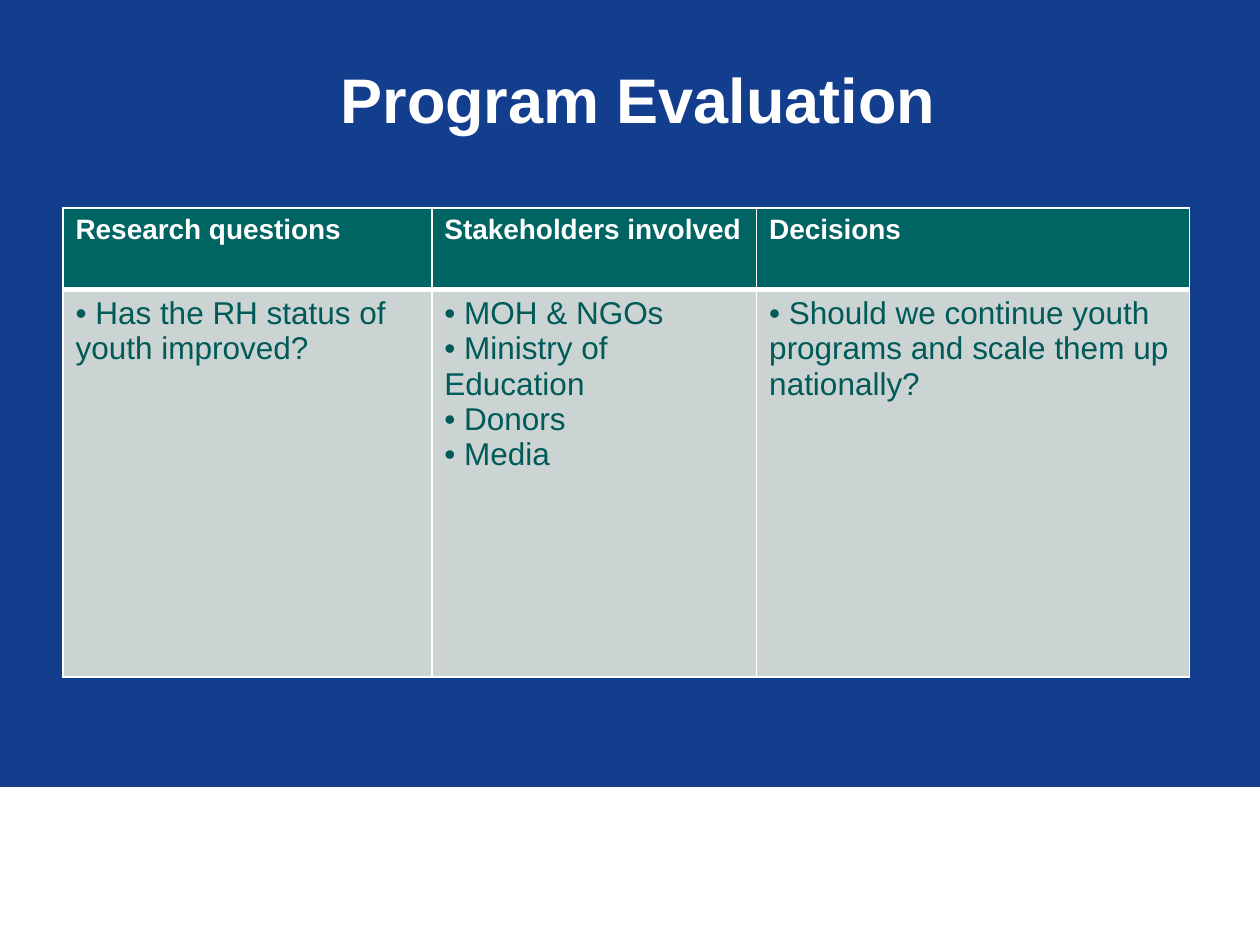
from dataclasses import dataclass

from lxml.etree import SubElement
from pptx import Presentation
from pptx.dml.color import RGBColor
from pptx.enum.shapes import MSO_SHAPE
from pptx.enum.text import MSO_ANCHOR, PP_ALIGN
from pptx.oxml.ns import qn
from pptx.util import Pt


@dataclass(frozen=True)
class Theme:
    font: str = "Arial"
    back: str = "133D8D"
    white: str = "FFFFFF"
    head: str = "006462"
    body: str = "CCD3D3"
    ink: str = "005A58"
    title_size: int = 36
    head_size: int = 16
    body_size: int = 18


@dataclass(frozen=True)
class Column:
    title: str
    width: float
    points: tuple[str, ...]


THEME = Theme()
COLUMNS = (
    Column("Research questions", 210.8, ("Has the RH status of youth improved?",)),
    Column("Stakeholders involved", 185.6,
           ("MOH & NGOs", "Ministry of Education", "Donors", "Media")),
    Column("Decisions", 247.4,
           ("Should we continue youth programs and scale them up nationally?",)),
)
ROWS = (46.8, 221.4)


def paint(fill, color: str) -> None:
    fill.solid()
    fill.fore_color.rgb = RGBColor.from_string(color)


def style(para, size: int, color: str, bold: bool) -> None:
    for run in para.runs:
        font = run.font
        font.name, font.size, font.bold = THEME.font, Pt(size), bold
        font.color.rgb = RGBColor.from_string(color)


def edge(cell, top: float, base: float) -> None:
    """Draw white cell borders, with 1 pt sides."""
    props = cell._tc.get_or_add_tcPr()
    for tag, width in (("lnL", 1), ("lnR", 1), ("lnT", top), ("lnB", base)):
        line = SubElement(props, qn(f"a:{tag}"), w=str(Pt(width)))
        fill = SubElement(line, qn("a:solidFill"))
        SubElement(fill, qn("a:srgbClr"), val=THEME.white)


def bullet(para) -> None:
    props = para._p.get_or_add_pPr()
    props.set("marL", "0")
    props.set("indent", "0")
    SubElement(props, qn("a:buFont"), typeface=THEME.font)
    SubElement(props, qn("a:buChar"), char="•")


def add_title(slide, text: str) -> None:
    box = slide.shapes.add_textbox(Pt(59), Pt(25.2), Pt(611.3), Pt(90))
    frame = box.text_frame
    frame.word_wrap = True
    frame.vertical_anchor = MSO_ANCHOR.MIDDLE
    frame.margin_bottom = Pt(32)
    frame.text = text
    para = frame.paragraphs[0]
    para.alignment = PP_ALIGN.CENTER
    style(para, THEME.title_size, THEME.white, True)


def add_band(slide) -> None:
    band = slide.shapes.add_shape(MSO_SHAPE.RECTANGLE, 0, Pt(450), Pt(720), Pt(90))
    band.shadow.inherit = False
    paint(band.fill, THEME.white)
    paint(band.line.fill, THEME.white)
    band.line.width = Pt(0.75)


def add_grid(slide, columns: tuple[Column, ...]) -> None:
    width = sum(col.width for col in columns)
    grid = slide.shapes.add_table(len(ROWS), len(columns), Pt(36), Pt(118.8),
                                  Pt(width), Pt(sum(ROWS))).table
    for row, height in zip(grid.rows, ROWS):
        row.height = Pt(height)
    for i, col in enumerate(columns):
        grid.columns[i].width = Pt(col.width)
        head, body = grid.cell(0, i), grid.cell(1, i)
        edge(head, 1, 3)
        edge(body, 3, 1)
        paint(head.fill, THEME.head)
        paint(body.fill, THEME.body)
        head.text_frame.text = col.title
        style(head.text_frame.paragraphs[0], THEME.head_size, THEME.white, True)
        body.text_frame.text = "\n".join(f" {point}" for point in col.points)
        for para in body.text_frame.paragraphs:
            bullet(para)
            style(para, THEME.body_size, THEME.ink, False)


def main() -> None:
    deck = Presentation()
    deck.slide_width, deck.slide_height = Pt(720), Pt(540)
    slide = deck.slides.add_slide(deck.slide_layouts[6])
    paint(slide.background.fill, THEME.back)
    add_band(slide)
    add_grid(slide, COLUMNS)
    add_title(slide, "Program Evaluation")
    deck.save("out.pptx")


if __name__ == "__main__":
    main()
